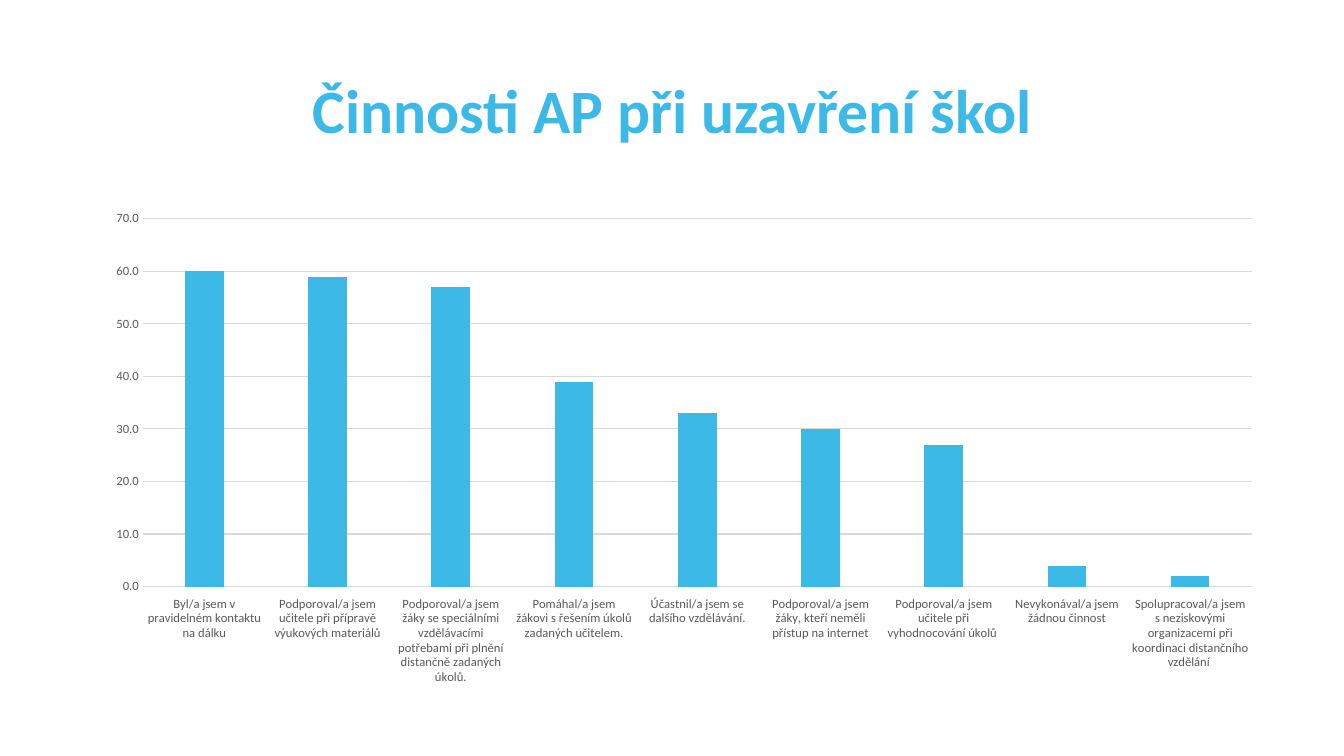
from pptx import Presentation
from pptx import util as u
from pptx.chart.data import CategoryChartData
from pptx.dml.color import RGBColor
from pptx.enum import chart as ch, text

BLUE = RGBColor(0x3C, 0xB9, 0xE6)
GRAY = RGBColor(0x59, 0x59, 0x59)
PALE = RGBColor(0xD9, 0xD9, 0xD9)
FACE = "Calibri"


def write(frame, words, size, color, bold=False, align=text.PP_ALIGN.CENTER):
    par = frame.paragraphs[0]
    par.alignment = align
    par.line_spacing = 0.9
    run = par.add_run()
    run.text = words
    run.font.name = FACE
    run.font.size = u.Pt(size)
    run.font.bold = bold
    run.font.color.rgb = color


deck = Presentation()
deck.slide_width = u.Inches(13.33)
deck.slide_height = u.Inches(7.5)
slide = deck.slides.add_slide(deck.slide_layouts[5])

title = slide.shapes.title
title.left, title.top = u.Inches(0.92), u.Inches(0.4)
title.width, title.height = u.Inches(11.5), u.Inches(1.45)
title.text_frame.vertical_anchor = text.MSO_ANCHOR.MIDDLE
write(title.text_frame, "Činnosti AP při uzavření škol", size=44, color=BLUE, bold=True)

shares = {
    "Byl/a jsem v pravidelném kontaktu na dálku": 60,
    "Podporoval/a jsem učitele při přípravě výukových materiálů": 59,
    "Podporoval/a jsem žáky se speciálními vzdělávacími potřebami při plnění distančně zadaných úkolů.": 57,
    "Pomáhal/a jsem žákovi s řešením úkolů zadaných učitelem.": 39,
    "Účastnil/a jsem se dalšího vzdělávání.": 33,
    "Podporoval/a jsem žáky, kteří neměli přístup na internet": 30,
    "Podporoval/a jsem učitele při vyhodnocování úkolů ": 27,
    "Nevykonával/a jsem žádnou činnost": 4,
    "Spolupracoval/a jsem s neziskovými organizacemi při koordinaci distančního vzdělání ": 2,
}
data = CategoryChartData(number_format="0.0")
data.categories = list(shares)
data.add_series("Series 1", list(shares.values()))

chart = slide.shapes.add_chart(
    ch.XL_CHART_TYPE.COLUMN_CLUSTERED,
    u.Inches(0.92), u.Inches(2), u.Inches(11.73), u.Inches(4.89), data).chart
chart.has_title = False
chart.has_legend = False
chart.font.name = FACE
chart.font.size = u.Pt(10)

plot = chart.plots[0]
plot.vary_by_categories = False
plot.gap_width = 219
plot.overlap = -27
bars = plot.series[0]
bars.invert_if_negative = False
bars.format.fill.solid()
bars.format.fill.fore_color.rgb = BLUE

cats, vals = chart.category_axis, chart.value_axis
for axis in (cats, vals):
    axis.major_tick_mark = ch.XL_TICK_MARK.NONE
    axis.minor_tick_mark = ch.XL_TICK_MARK.NONE
    font = axis.tick_labels.font
    font.name = FACE
    font.size = u.Pt(9)
    font.color.rgb = GRAY

vals.has_major_gridlines = True
for line in (cats.format.line, vals.major_gridlines.format.line):
    line.color.rgb = PALE
    line.width = u.Pt(0.75)

cats.tick_label_position = ch.XL_TICK_LABEL_POSITION.LOW
vals.format.line.fill.background()
vals.minimum_scale, vals.maximum_scale, vals.major_unit = 0, 70, 10
vals.tick_labels.number_format = "0.0"
vals.tick_labels.number_format_is_linked = False

deck.save("out.pptx")
